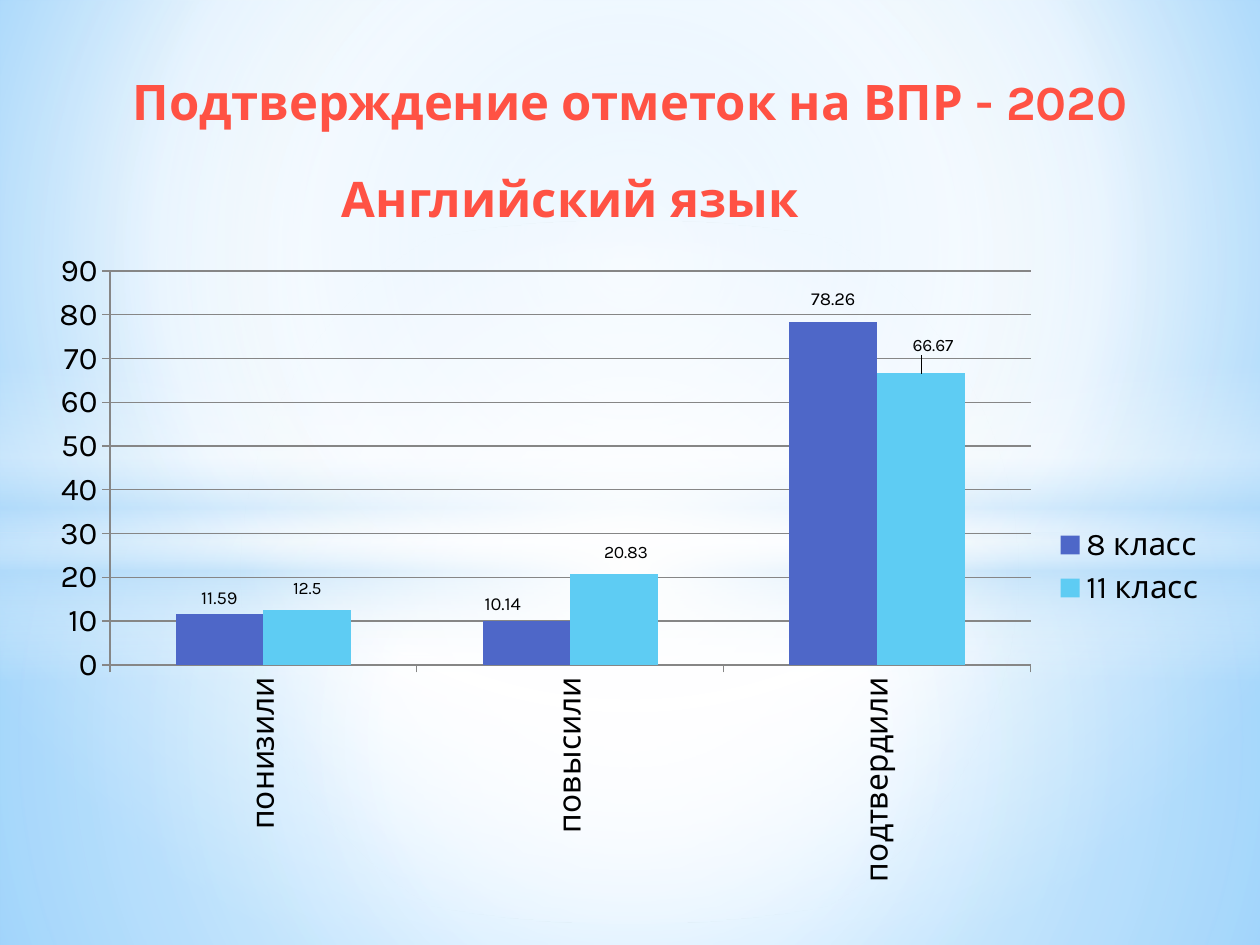
from lxml import etree
from pptx import Presentation, util as u
from pptx.chart.data import CategoryChartData
from pptx.dml.color import RGBColor
from pptx.enum import chart as charts, shapes, text
from pptx.oxml import ns, parse_xml

WIDTH, HEIGHT = u.Inches(10), u.Inches(7.5)
FONT = "Karla"
WHITE = RGBColor(0xFF, 0xFF, 0xFF)
PALE = RGBColor(0xB4, 0xDC, 0xFA)
SKY = RGBColor(0x9E, 0xD5, 0xFF)
AZURE = RGBColor(0x5B, 0xB9, 0xFF)
CORAL = RGBColor(0xFF, 0x52, 0x44)
BLACK = RGBColor(0, 0, 0)
GREY = RGBColor(0x86, 0x86, 0x86)
INDIGO = RGBColor(0x4E, 0x67, 0xC8)
CYAN = RGBColor(0x5E, 0xCC, 0xF3)

CATEGORIES = ["понизили", "повысили", "подтвердили"]
# name, values, colour, label size, label shifts as shares of the chart by point
SERIES = [
    ("8 класс", (11.59, 10.14, 78.26), INDIGO, 10.5, {1: (-0.02, 0), 2: (0, -0.01)}),
    ("11 класс", (12.5, 20.83, 66.67), CYAN, 10,
     {0: (0, -0.01), 1: (0.01, -0.01), 2: (0.01, -0.02)}),
]


def box(left, top, width, height):
    """Turn shares of the slide into lengths."""
    return (int(left * WIDTH), int(top * HEIGHT),
            int(width * WIDTH), int(height * HEIGHT))


def set_gradient(fill, owner, stops, center=None):
    """Fill with (position, colour, opacity) stops: circular around center, else downward."""
    fill.gradient()
    gradient = owner.find(".//" + ns.qn("a:gradFill"))
    for child in list(gradient):
        gradient.remove(child)
    stop_list = etree.SubElement(gradient, ns.qn("a:gsLst"))
    for position, color, opacity in stops:
        stop = etree.SubElement(stop_list, ns.qn("a:gs"), pos=str(position * 1000))
        tone = etree.SubElement(stop, ns.qn("a:srgbClr"), val=str(color))
        if opacity < 100:
            etree.SubElement(tone, ns.qn("a:alpha"), val=str(opacity * 1000))
    if center:
        shade = etree.SubElement(gradient, ns.qn("a:path"), path="circle")
        insets = {side: str(inset * 1000) for side, inset in zip("ltrb", center)}
        etree.SubElement(shade, ns.qn("a:fillToRect"), **insets)
    else:
        etree.SubElement(gradient, ns.qn("a:lin"), ang="5400000", scaled="0")


def add_glow(slide, kind, place, stops, center=(50, 50, 50, 50)):
    shape = slide.shapes.add_shape(kind, *box(*place))
    shape.shadow.inherit = False
    shape.line.fill.background()
    set_gradient(shape.fill, shape.element, stops, center)


def add_backdrop(slide):
    rectangle, oval = shapes.MSO_SHAPE.RECTANGLE, shapes.MSO_SHAPE.OVAL
    set_gradient(slide.background.fill, slide.element,
                 [(0, SKY, 100), (60, WHITE, 100), (100, AZURE, 100)], (20, 10, 20, 60))
    horizon = 0.564
    add_glow(slide, rectangle, (0, horizon, 1, 1 - horizon),
             [(0, WHITE, 91), (37, WHITE, 76), (100, PALE, 79)])
    add_glow(slide, rectangle, (0, 0, 1, horizon),
             [(0, WHITE, 89), (48, WHITE, 62), (100, PALE, 79)])
    add_glow(slide, rectangle, (0, 0.387, 1, 0.333),
             [(0, WHITE, 0), (29, WHITE, 30), (45, PALE, 40),
              (55, WHITE, 26), (65, PALE, 60), (100, WHITE, 0)], None)
    add_glow(slide, oval, (0, 0.233, 1, 0.744), [(0, WHITE, 100), (54, WHITE, 0)])


def add_heading(slide, words, place):
    frame = slide.shapes.add_textbox(*box(*place)).text_frame
    frame.word_wrap = True
    frame.auto_size = text.MSO_AUTO_SIZE.SHAPE_TO_FIT_TEXT
    paragraph = frame.paragraphs[0]
    paragraph.text = words
    paragraph.alignment = text.PP_ALIGN.CENTER
    font = paragraph.font
    font.name, font.size, font.bold = FONT, u.Pt(28), True
    font.color.rgb = CORAL


def layout_xml(x, y, size=None):
    """Manual layout: a shift, or with a size the inner plot area."""
    values = {"x": x, "y": y}
    modes = ""
    if size:
        modes = ('<c:layoutTarget val="inner"/><c:xMode val="edge"/>'
                 '<c:yMode val="edge"/>')
        values.update(zip("wh", size))
    parts = "".join(f'<c:{key} val="{value}"/>' for key, value in values.items())
    return parse_xml(f'<c:layout {ns.nsdecls("c")}><c:manualLayout>'
                     f'{modes}{parts}</c:manualLayout></c:layout>')


def style_series(series, color, label_size, shifts):
    series.format.fill.solid()
    series.format.fill.fore_color.rgb = color
    labels = series.data_labels
    labels.show_value = True
    labels.position = charts.XL_LABEL_POSITION.OUTSIDE_END
    labels.font.size = u.Pt(label_size)
    for index, shift in shifts.items():
        label = series.points[index].data_label
        label.font.size = u.Pt(label_size)
        label.position = charts.XL_LABEL_POSITION.OUTSIDE_END
    marks = labels._element.findall(ns.qn("c:dLbl"))
    for mark, shift in zip(marks, shifts.values()):
        mark.find(ns.qn("c:idx")).addnext(layout_xml(*shift))


def style_axes(chart):
    value_axis, category_axis = chart.value_axis, chart.category_axis
    value_axis.minimum_scale, value_axis.maximum_scale = 0, 90
    value_axis.major_unit = 10
    value_axis.has_major_gridlines = True
    for line in (value_axis.major_gridlines.format.line,
                 value_axis.format.line, category_axis.format.line):
        line.color.rgb = GREY
        line.width = u.Pt(0.75)
    for axis in (value_axis, category_axis):
        axis.major_tick_mark = charts.XL_TICK_MARK.OUTSIDE
        axis.tick_labels.font.size = u.Pt(18)
    body = category_axis._element.find(".//" + ns.qn("a:bodyPr"))
    body.set("rot", "-5400000")
    body.set("vert", "horz")


def add_marks_chart(slide, place):
    data = CategoryChartData()
    data.categories = CATEGORIES
    for name, values, *_ in SERIES:
        data.add_series(name, values)
    chart = slide.shapes.add_chart(charts.XL_CHART_TYPE.COLUMN_CLUSTERED,
                                   *box(*place), data).chart
    chart.has_title = False
    chart.font.name, chart.font.size = FONT, u.Pt(18)
    chart.font.color.rgb = BLACK
    chart.has_legend = True
    chart.legend.position = charts.XL_LEGEND_POSITION.RIGHT
    chart.legend.include_in_layout = False
    plot = chart.plots[0]
    plot.gap_width, plot.overlap = 150, 0
    plot.vary_by_categories = False
    for series, (_, _, color, label_size, shifts) in zip(plot.series, SERIES):
        style_series(series, color, label_size, shifts)
    style_axes(chart)
    area = chart._chartSpace.find(".//" + ns.qn("c:plotArea"))
    for layout in area.findall(ns.qn("c:layout")):
        area.remove(layout)
    area.insert(0, layout_xml(0.06, 0.05, (0.78, 0.6)))


def main():
    presentation = Presentation()
    presentation.slide_width, presentation.slide_height = WIDTH, HEIGHT
    slide = presentation.slides.add_slide(presentation.slide_layouts[6])
    add_backdrop(slide)
    add_heading(slide, "Подтверждение отметок на ВПР - 2020", (0.067, 0.069, 0.866, 0.076))
    add_marks_chart(slide, (0.031, 0.252, 0.937, 0.695))
    add_heading(slide, "Английский язык", (0.177, 0.172, 0.551, 0.076))
    presentation.save("out.pptx")


if __name__ == "__main__":
    main()
